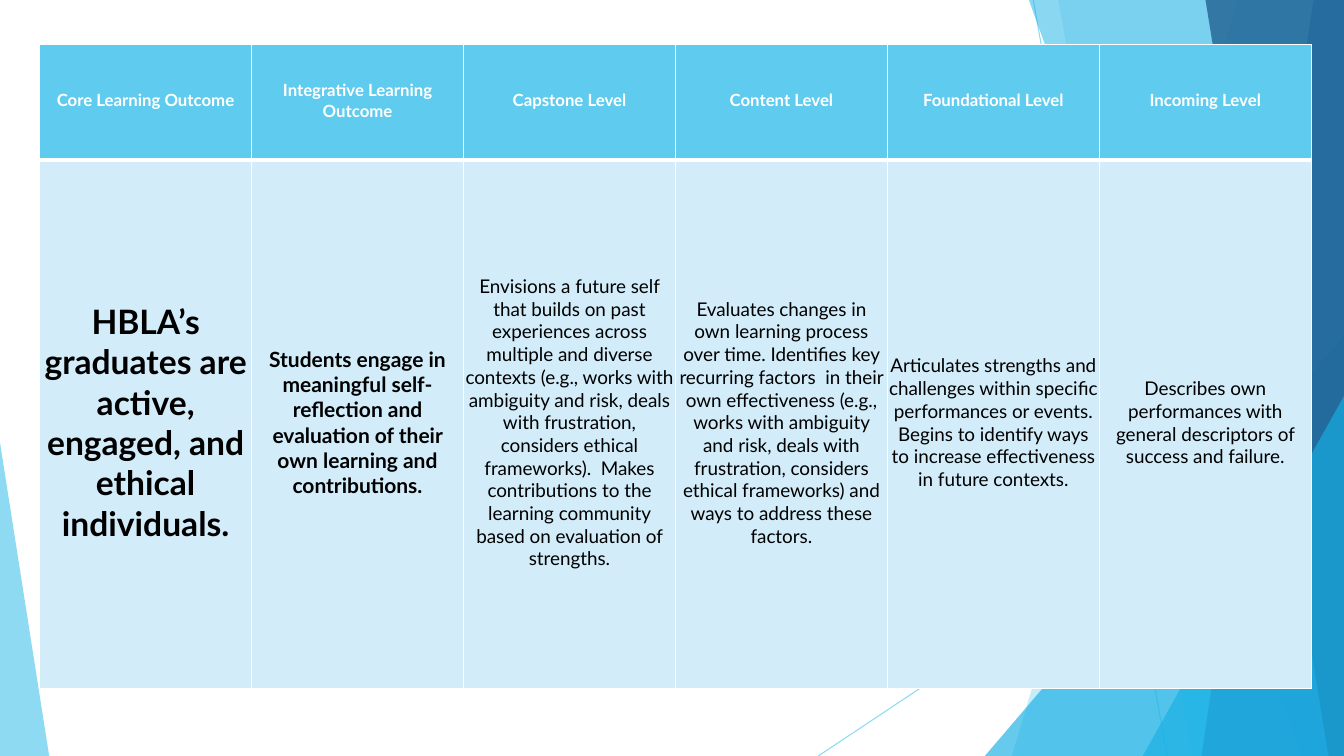
from lxml import etree
from pptx import Presentation
from pptx.dml.color import RGBColor
from pptx.enum.shapes import MSO_CONNECTOR, MSO_SHAPE
from pptx.enum.text import MSO_ANCHOR, PP_ALIGN
from pptx.oxml.ns import qn
from pptx.util import Cm, Pt

FONT = "Lato"
COLORS = {
    "sky": "5FCBEF",
    "cyan": "17B0E4",
    "blue": "2E83C3",
    "navy": "226292",
    "pale": "D2ECF9",
    "white": "FFFFFF",
    "black": "000000",
}

# Facets from back to front, in cm from the corner of the slide.
# pane: top left x, bottom left x; triangle: left, top, width, height, apex
FACETS = [
    ("pane", (31.19, 25.5), "sky", 36),
    ("pane", (26.67, 30.05), "sky", 20),
    ("triangle", (24.82, 8.46, 9.05, 10.59, 1), "cyan", 66),
    ("pane", (25.93, 32.79), "cyan", 50),
    ("pane", (33.1, 30.28), "blue", 70),
    ("pane", (30.38, 33.48), "navy", 80),
    ("triangle", (28.8, 9.98, 5.07, 9.07, 1), "cyan", 66),
    ("triangle", (0, 11.15, 1.24, 7.9, 0), "sky", 70),
]
RAYS = [((26.04, 0), (29.41, 19.05)), ((33.87, 10.24), (20.62, 19.05))]

# Heading, text, text size, bold
COLUMNS = [
    ("Core Learning Outcome",
     "HBLA’s graduates are active, engaged, and ethical individuals.", 24, True),
    ("Integrative Learning Outcome",
     "Students engage in meaningful self-reflection and evaluation of their own "
     "learning and contributions.", 15, True),
    ("Capstone Level",
     "Envisions a future self that builds on past experiences across multiple and "
     "diverse contexts (e.g., works with ambiguity and risk, deals with frustration, "
     "considers ethical frameworks).  Makes contributions to the learning community "
     "based on evaluation of strengths.", 13.5, False),
    ("Content Level",
     "Evaluates changes in own learning process over time. Identifies key "
     "recurring factors  in their own effectiveness (e.g., works with ambiguity and "
     "risk, deals with frustration, considers ethical frameworks) and ways to address "
     "these factors.", 13.5, False),
    ("Foundational Level",
     "Articulates strengths and challenges within specific performances or events. "
     "Begins to identify ways to increase effectiveness in future contexts.",
     13.5, False),
    ("Incoming Level",
     "Describes own performances with general descriptors of success and failure.",
     13.5, False),
]


def rgb(name):
    return RGBColor.from_string(COLORS[name])


def set_opacity(color_format_parent, percent):
    """Add an alpha value to the solid colour below the given element."""
    color = next(color_format_parent.iter(qn("a:srgbClr")))
    etree.SubElement(color, qn("a:alpha")).set("val", str(percent * 1000))


def add_ray(slide, left, top, start, end):
    ray = slide.shapes.add_connector(
        MSO_CONNECTOR.STRAIGHT,
        left + Cm(start[0]), top + Cm(start[1]),
        left + Cm(end[0]), top + Cm(end[1]))
    ray.line.color.rgb = rgb("sky")
    ray.line.width = Pt(0.75)
    properties = ray._element.spPr
    set_opacity(properties, 70)
    etree.SubElement(properties, qn("a:effectLst"))


def add_pane(slide, left, top, width, height, top_x, bottom_x):
    """Four-sided pane that reaches the right edge of the box."""
    right, bottom = left + width, top + height
    builder = slide.shapes.build_freeform(left + Cm(top_x), top)
    builder.add_line_segments(
        [(right, top), (right, bottom), (left + Cm(bottom_x), bottom)], close=True)
    return builder.convert_to_shape()


def add_triangle(slide, box_left, box_top, left, top, width, height, apex):
    triangle = slide.shapes.add_shape(
        MSO_SHAPE.ISOSCELES_TRIANGLE, box_left + Cm(left), box_top + Cm(top),
        Cm(width), Cm(height))
    triangle.adjustments[0] = apex
    return triangle


def add_backdrop(slide, left, top, width, height):
    for start, end in RAYS:
        add_ray(slide, left, top, start, end)
    for kind, geometry, color, opacity in FACETS:
        if kind == "pane":
            facet = add_pane(slide, left, top, width, height, *geometry)
        else:
            facet = add_triangle(slide, left, top, *geometry)
        facet.shadow.inherit = False
        facet.fill.solid()
        facet.fill.fore_color.rgb = rgb(color)
        set_opacity(facet._element.spPr, opacity)
        facet.line.fill.background()


def set_borders(cell, top, bottom):
    """White borders; they stand before the fill in the cell properties."""
    properties = cell._tc.get_or_add_tcPr()
    sides = [("a:lnL", 1), ("a:lnR", 1), ("a:lnT", top), ("a:lnB", bottom)]
    for index, (tag, points) in enumerate(sides):
        border = etree.Element(qn(tag), w=str(Pt(points)))
        fill = etree.SubElement(border, qn("a:solidFill"))
        etree.SubElement(fill, qn("a:srgbClr"), val=COLORS["white"])
        properties.insert(index, border)


def fill_cell(cell, text, size, bold, color, background):
    cell.fill.solid()
    cell.fill.fore_color.rgb = rgb(background)
    cell.vertical_anchor = MSO_ANCHOR.MIDDLE
    cell.margin_left = cell.margin_right = cell.margin_top = Cm(0.03)
    cell.margin_bottom = Cm(0.13)
    cell.text = text
    paragraph = cell.text_frame.paragraphs[0]
    paragraph.alignment = PP_ALIGN.CENTER
    paragraph.font.name = FONT
    paragraph.font.size = Pt(size)
    paragraph.font.bold = bold
    paragraph.font.color.rgb = rgb(color)


def add_outcomes_table(slide, left, top, width, height):
    table = slide.shapes.add_table(
        2, len(COLUMNS), left, top, width, height).table
    table.first_row = table.horz_banding = False
    table.rows[0].height = Cm(2.92)
    table.rows[1].height = height - Cm(2.92)
    for index, (heading, text, size, bold) in enumerate(COLUMNS):
        header, body = table.cell(0, index), table.cell(1, index)
        fill_cell(header, heading, 12, True, "white", "sky")
        set_borders(header, top=1, bottom=3)
        fill_cell(body, text, size, bold, "black", "pale")
        set_borders(body, top=3, bottom=1)


def main():
    presentation = Presentation()
    presentation.slide_width, presentation.slide_height = Cm(33.87), Cm(19.05)
    slide = presentation.slides.add_slide(presentation.slide_layouts[6])
    add_backdrop(slide, 0, 0, presentation.slide_width, presentation.slide_height)
    add_outcomes_table(slide, Cm(1), Cm(1.12), Cm(32.05), Cm(16.23))
    presentation.save("out.pptx")


if __name__ == "__main__":
    main()
